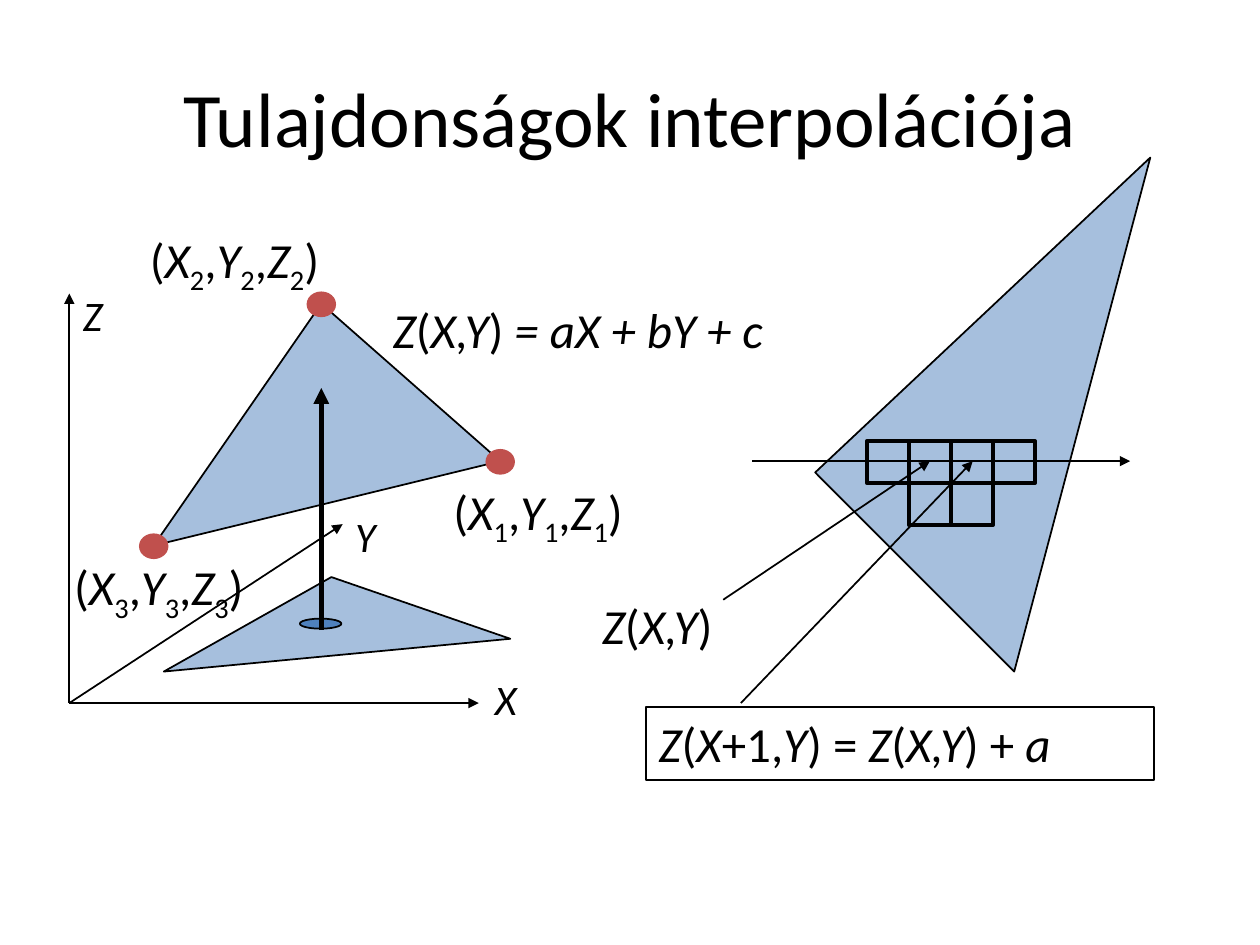
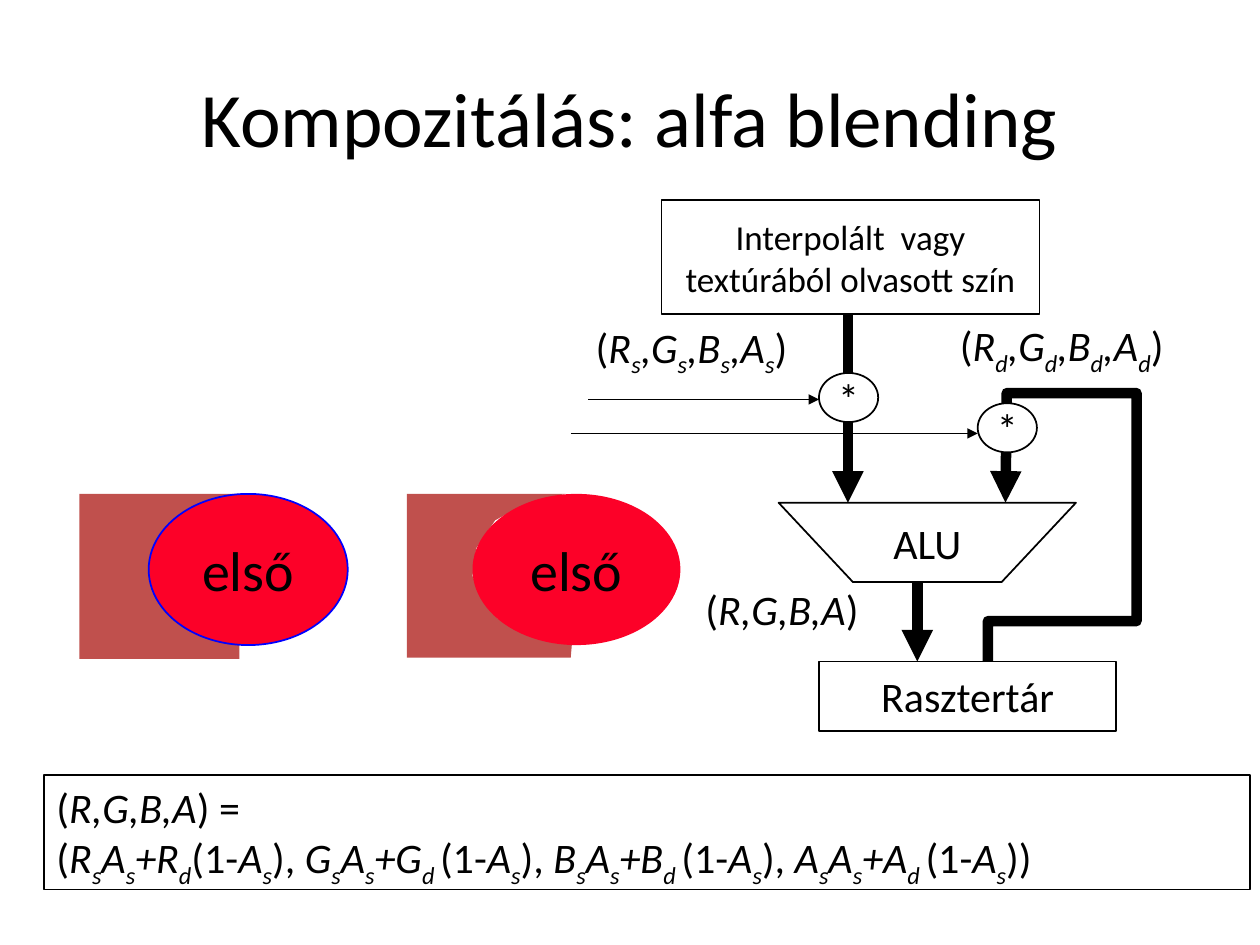
from lxml.etree import SubElement
from pptx import Presentation
from pptx.dml.color import RGBColor
from pptx.enum.shapes import MSO_CONNECTOR as Connector, MSO_SHAPE as Preset
from pptx.enum.text import MSO_ANCHOR as Anchor, MSO_AUTO_SIZE as AutoSize, PP_ALIGN as Align
from pptx.oxml.ns import qn
from pptx.util import Inches, Pt

COLORS = {
    "black": "000000",
    "white": "FFFFFF",
    "blue": "4F81BD",
    "brick": "C0504D",
    "red": "FC0128",
    "outline": "0000FF",
}
FONT = "Calibri"
TITLE_ONLY = 5


def color(name):
    return RGBColor.from_string(COLORS[name])


class Sketch:
    """Holds the style and the current slide."""

    def __init__(self, deck):
        self.deck = deck
        self.page = None

    def new_page(self, title):
        self.page = self.deck.slides.add_slide(self.deck.slide_layouts[TITLE_ONLY])
        box = self.page.shapes.title
        box.left, box.top = Inches(0.5), Inches(0.3)
        box.width, box.height = Inches(9), Inches(1.25)
        self.set_text(box, title, 44, Align.CENTER, Anchor.MIDDLE, wrap=True)

    def set_text(self, box, text, size, align=Align.LEFT, anchor=Anchor.TOP, wrap=False):
        """In the text, /.../ is italic and _..._ is subscript."""
        frame = box.text_frame
        frame.word_wrap = wrap
        frame.vertical_anchor = anchor
        for index, line in enumerate(text.split("\n")):
            para = frame.paragraphs[0] if index == 0 else frame.add_paragraph()
            para.alignment = align
            for slant, part in enumerate(line.split("/")):
                for low, piece in enumerate(part.split("_")):
                    if piece:
                        self.add_span(para, piece, size, slant % 2 == 1, low % 2 == 1)

    def add_span(self, para, text, size, italic, subscript):
        span = para.add_run()
        span.text = text
        span.font.name, span.font.size = FONT, Pt(size)
        span.font.color.rgb = color("black")
        span.font.italic = italic
        if subscript:
            span._r.get_or_add_rPr().set("baseline", "-25000")

    def paint(self, shape, fill, line, weight, alpha=None):
        shape.shadow.inherit = False
        if fill:
            shape.fill.solid()
            shape.fill.fore_color.rgb = color(fill)
        else:
            shape.fill.background()
        if alpha:
            tint = shape.element.spPr.find(qn("a:solidFill")).find(qn("a:srgbClr"))
            SubElement(tint, qn("a:alpha"), val=str(alpha * 1000))
        if line:
            self.stroke(shape, line, weight)
        else:
            shape.line.fill.background()

    def stroke(self, shape, line, weight, arrow=False):
        shape.line.color.rgb = color(line)
        shape.line.width = Pt(weight)
        if arrow:
            outline = shape.element.spPr.find(qn("a:ln"))
            SubElement(outline, qn("a:tailEnd"), type="triangle")

    def label(self, left, top, width, height, text, size):
        box = self.page.shapes.add_textbox(
            Inches(left), Inches(top), Inches(width), Inches(height))
        self.set_text(box, text, size)
        box.text_frame.auto_size = AutoSize.SHAPE_TO_FIT_TEXT

    def shape(self, preset, left, top, width, height, fill=None, line="black", weight=1):
        shape = self.page.shapes.add_shape(
            preset, Inches(left), Inches(top), Inches(width), Inches(height))
        self.paint(shape, fill, line, weight)
        return shape

    def node(self, preset, left, top, width, height, text, size, fill=None, line="black"):
        box = self.shape(preset, left, top, width, height, fill, line)
        self.set_text(box, text, size, Align.CENTER, Anchor.MIDDLE)

    def formula(self, left, top, width, height, text, size):
        box = self.shape(Preset.RECTANGLE, left, top, width, height)
        self.set_text(box, text, size, wrap=True)

    def outline(self, points, fill=None, line="black", weight=1, alpha=None, closed=True):
        corners = [(Inches(x), Inches(y)) for x, y in points]
        builder = self.page.shapes.build_freeform(*corners[0])
        builder.add_line_segments(corners[1:], close=closed)
        shape = builder.convert_to_shape()
        self.paint(shape, fill, line, weight, alpha)
        return shape

    def triangle(self, *points):
        self.outline(points, "blue", alpha=50)

    def arrow(self, start, end, weight=1):
        ends = [Inches(value) for value in (*start, *end)]
        line = self.page.shapes.add_connector(Connector.STRAIGHT, *ends)
        self.stroke(line, "black", weight, arrow=True)
        SubElement(line.element.spPr, qn("a:effectLst"))


def interpolation_page(sketch):
    sketch.new_page("Tulajdonságok interpolációja")

    # Axes, the triangle in space and its projection
    origin = (0.55, 5.58)
    for tip in [(3.8, 5.58), (2.72, 4.16), (0.55, 2.33)]:
        sketch.arrow(origin, tip)
    vertices = [(3.97, 3.66), (1.22, 4.33), (2.55, 2.41)]
    sketch.triangle(*vertices)
    sketch.triangle((1.3, 5.33), (4.05, 5.07), (2.63, 4.58))
    for name, left, top in [("X", 3.83, 5.3), ("Y", 2.72, 4), ("Z", 0.56, 2.25)]:
        sketch.label(left, top, 0.4, 0.5, f"/{name}/", 24)
    sketch.shape(Preset.OVAL, 2.38, 4.91, 0.33, 0.08, "blue")
    sketch.arrow((2.55, 5), (2.55, 3.08), weight=3)
    sketch.label(3.02, 2.33, 3.62, 0.57, "/Z/(/X,Y/)/ = aX + bY + c/", 28)

    # Triangle on the pixel grid
    sketch.triangle((8.05, 5.33), (6.47, 3.75), (9.13, 1.25))
    cell = 1 / 3
    for row, columns in enumerate([range(4), range(1, 3)]):
        for column in columns:
            sketch.shape(Preset.RECTANGLE, 6.88 + column * cell, 3.5 + row * cell,
                         cell, cell, weight=2.25)
    sketch.label(4.68, 4.68, 1.23, 0.57, "/Z/(/X,Y/)", 28)
    sketch.arrow((5.74, 4.76), (7.38, 3.66))
    sketch.arrow((5.97, 3.66), (8.97, 3.66))
    sketch.arrow((5.88, 5.58), (7.72, 3.66))
    sketch.formula(5.13, 5.61, 4.03, 0.58, "/Z/(/X/+1,/Y/) = /Z/(/X,Y/) + /a/", 28)

    # Vertices with their coordinates
    corners = [(3.5, 3.77), (1.09, 1.77), (0.49, 4.37)]
    for x, y in vertices:
        sketch.shape(Preset.OVAL, x - 0.11, y - 0.09, 0.22, 0.19, "brick", "brick")
    for number, (left, top) in enumerate(corners, start=1):
        text = ",".join(f"/{axis}/_{number}_" for axis in "XYZ")
        sketch.label(left, top, 1.72, 0.57, f"({text})", 28)


def blending_page(sketch):
    sketch.new_page("Kompozitálás: alfa blending")

    # Data path from the source colour to the frame buffer
    sketch.node(Preset.RECTANGLE, 5.25, 1.59, 3, 0.9,
                "Interpolált  vagy\ntextúrából olvasott szín", 20)
    sketch.node(Preset.RECTANGLE, 6.5, 5.25, 2.36, 0.55, "Rasztertár", 24)
    unit = sketch.outline([(6.18, 3.99), (6.77, 4.62), (7.95, 4.62), (8.54, 3.99)])
    sketch.set_text(unit, "ALU", 24, Align.CENTER, Anchor.MIDDLE)
    sketch.arrow((6.73, 2.49), (6.73, 3.99), weight=6)
    sketch.arrow((7.28, 4.62), (7.28, 5.25), weight=6)
    feedback = sketch.outline(
        [(7.84, 5.25), (7.84, 4.93), (9.02, 4.93), (9.02, 3.12), (7.99, 3.12), (7.98, 3.99)],
        closed=False)
    sketch.stroke(feedback, "black", 6, arrow=True)

    # Colour labels
    for left, top, width, index in [(4.63, 2.5, 1.87, "s"), (7.52, 2.49, 1.97, "d")]:
        text = ",".join(f"{channel}_{index}_" for channel in "RGBA")
        sketch.label(left, top, width, 0.5, f"(/{text}/)", 24)
    sketch.label(5.5, 4.58, 1.52, 0.5, "(/R,G,B,A/)", 24)

    # Blending formula
    terms = [f"/{channel}_s_A_s_+{channel}_{target}_/(1-/A_s_/)"
             for channel, target in zip("RGBA", ["d", "d ", "d ", "d "])]
    sketch.formula(0.35, 6.15, 9.57, 0.91, f"(/R,G,B,A/) =\n({', '.join(terms)})", 24)

    # Multipliers with their weights
    sketch.arrow((4.67, 3.17), (6.5, 3.17))
    sketch.arrow((4.53, 3.44), (7.76, 3.44))
    for left, top in [(6.5, 2.96), (7.76, 3.2)]:
        sketch.node(Preset.OVAL, left, top, 0.47, 0.39, "*", 24, "white")

    # Overlapping shapes: whole square, then the square with a cut
    sketch.shape(Preset.RECTANGLE, 0.63, 3.92, 1.27, 1.31, "brick", None)
    sketch.node(Preset.OVAL, 1.18, 3.92, 1.58, 1.2, "első", 32, "red", "outline")
    sketch.outline(
        [(4.49, 3.92), (3.23, 3.92), (3.23, 5.22), (4.53, 5.22), (4.54, 5.1), (4.3, 5.08),
         (4.14, 5.02), (3.95, 4.91), (3.82, 4.74), (3.75, 4.57), (3.78, 4.35),
         (3.93, 4.13), (4.11, 4.03), (4.3, 3.96)], "brick", None)
    sketch.node(Preset.OVAL, 3.75, 3.92, 1.65, 1.2, "első", 32, "red", None)


def main():
    deck = Presentation()
    deck.slide_width, deck.slide_height = Inches(10), Inches(7.5)
    sketch = Sketch(deck)
    interpolation_page(sketch)
    blending_page(sketch)
    deck.save("out.pptx")


if __name__ == "__main__":
    main()
